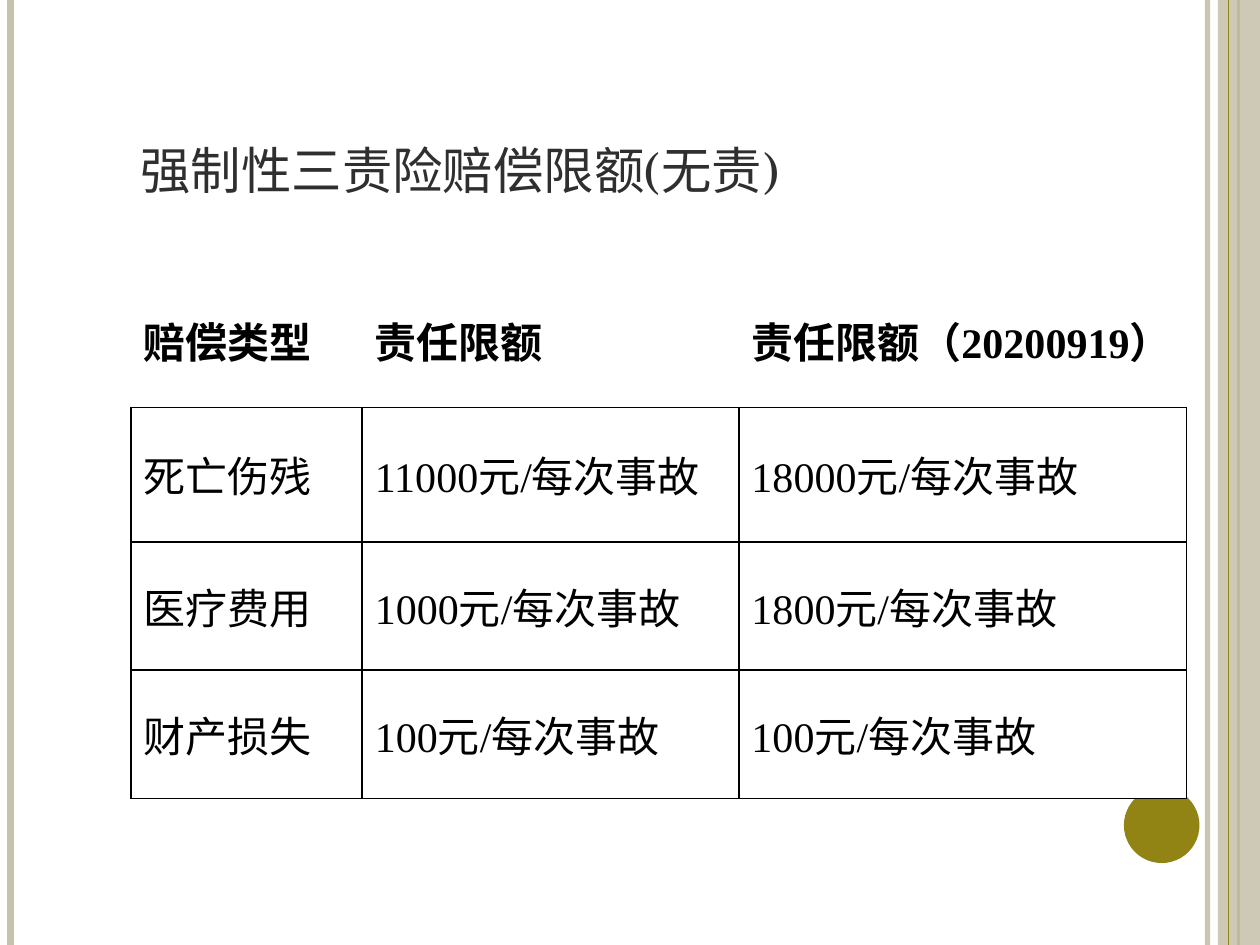
from dataclasses import dataclass

from lxml import etree
from pptx import Presentation
from pptx import util as u
from pptx.dml import color as dc
from pptx.enum import shapes, text
from pptx.oxml import ns

HUES = {"sand": "C7C2AC", "olive": "918415", "ink": "2F2F2F",
        "black": "000000", "white": "FFFFFF"}
WIDE, HIGH = 720, 540
COLS = [132.25, 215.25, 255.75]
ROWS = [76.75, 77, 73.25, 73.25]
CELLS = [
    ["赔偿类型", "责任限额", "责任限额（20200919）"],
    ["死亡伤残", "11000元/每次事故", "18000元/每次事故"],
    ["医疗费用", "1000元/每次事故", "1800元/每次事故"],
    ["财产损失", "100元/每次事故", "100元/每次事故"],
]


@dataclass
class Stripe:
    x: float
    width: float
    hue: str
    alpha: int = 100


@dataclass
class Block:
    kind: int
    x: float
    y: float
    wide: float
    high: float
    hue: str
    alpha: int = 100


def rgb(hue: str) -> dc.RGBColor:
    return dc.RGBColor.from_string(HUES[hue])


def fade(node, alpha: int) -> None:
    if alpha < 100:
        tone = node.find(".//" + ns.qn("a:srgbClr"))
        etree.SubElement(tone, ns.qn("a:alpha"), val=str(alpha * 1000))


def draw_stripe(slide, item: Stripe) -> None:
    line = slide.shapes.add_connector(
        shapes.MSO_CONNECTOR.STRAIGHT,
        u.Pt(item.x), u.Pt(0), u.Pt(item.x), u.Pt(HIGH))
    line.line.color.rgb = rgb(item.hue)
    line.line.width = u.Pt(item.width)
    props = line._element.spPr
    fade(props, item.alpha)
    etree.SubElement(props, ns.qn("a:effectLst"))


def draw_block(slide, item: Block) -> None:
    box = slide.shapes.add_shape(
        item.kind, u.Pt(item.x), u.Pt(item.y), u.Pt(item.wide), u.Pt(item.high))
    box.shadow.inherit = False
    box.fill.solid()
    box.fill.fore_color.rgb = rgb(item.hue)
    box.line.fill.background()
    fade(box._element.spPr, item.alpha)


def style(run, face: str, size: float, hue: str, bold: bool = False) -> None:
    run.font.name = face
    run.font.size = u.Pt(size)
    run.font.bold = bold
    run.font.color.rgb = rgb(hue)


def draw_title(slide, words: str) -> None:
    box = slide.shapes.add_textbox(u.Pt(73.2), u.Pt(7.75), u.Pt(564), u.Pt(111.5))
    frame = box.text_frame
    frame.word_wrap = True
    frame.vertical_anchor = text.MSO_ANCHOR.BOTTOM
    frame.text = words
    run = frame.paragraphs[0].runs[0]
    style(run, "TeX Gyre Schola", 36, "ink")
    run.font._element.set("cap", "small")


def edge(cell, sides: str) -> None:
    props = cell._tc.get_or_add_tcPr()
    for spot, side in enumerate("LRTB"):
        line = etree.Element(ns.qn(f"a:ln{side}"), w=str(u.Pt(1)))
        if side in sides:
            fill = etree.SubElement(line, ns.qn("a:solidFill"))
            etree.SubElement(fill, ns.qn("a:srgbClr"), val=HUES["black"])
        else:
            etree.SubElement(line, ns.qn("a:noFill"))
        props.insert(spot, line)


def draw_cell(cell, words: str, head: bool) -> None:
    cell.text = words
    cell.vertical_anchor = text.MSO_ANCHOR.MIDDLE
    para = cell.text_frame.paragraphs[0]
    props = para._p.get_or_add_pPr()
    props.set("marL", str(u.Pt(35)))
    props.set("indent", str(u.Pt(-35)))
    style(para.runs[0], "Times New Roman", 24, "black", head)
    if head:
        cell.fill.background()
    else:
        cell.fill.solid()
        cell.fill.fore_color.rgb = rgb("white")
    edge(cell, "B" if head else "LRTB")


def draw_table(slide) -> None:
    grid = slide.shapes.add_table(
        len(ROWS), len(COLS), u.Pt(74.75), u.Pt(156),
        u.Pt(sum(COLS)), u.Pt(sum(ROWS))).table
    grid.first_row = False
    grid.horz_banding = False
    for col, wide in zip(grid.columns, COLS):
        col.width = u.Pt(wide)
    for r, (row, high) in enumerate(zip(grid.rows, ROWS)):
        row.height = u.Pt(high)
        for cell, words in zip(row.cells, CELLS[r]):
            draw_cell(cell, words, r == 0)


def main() -> None:
    deck = Presentation()
    deck.slide_width, deck.slide_height = u.Pt(WIDE), u.Pt(HIGH)
    slide = deck.slides.add_slide(deck.slide_layouts[6])
    kinds = shapes.MSO_SHAPE
    for item in (Stripe(690, 3, "sand", 93), Stripe(6, 4.5, "sand"),
                 Stripe(707.75, 1.5, "olive")):
        draw_stripe(slide, item)
    draw_block(slide, Block(kinds.RECTANGLE, 696, 0, 24, HIGH, "sand", 87))
    draw_stripe(slide, Stripe(702, 0.75, "olive"))
    draw_block(slide, Block(kinds.OVAL, 642.25, 450, 43.2, 43.2, "olive"))
    draw_title(slide, "强制性三责险赔偿限额(无责)")
    draw_table(slide)
    deck.save("out.pptx")


if __name__ == "__main__":
    main()
